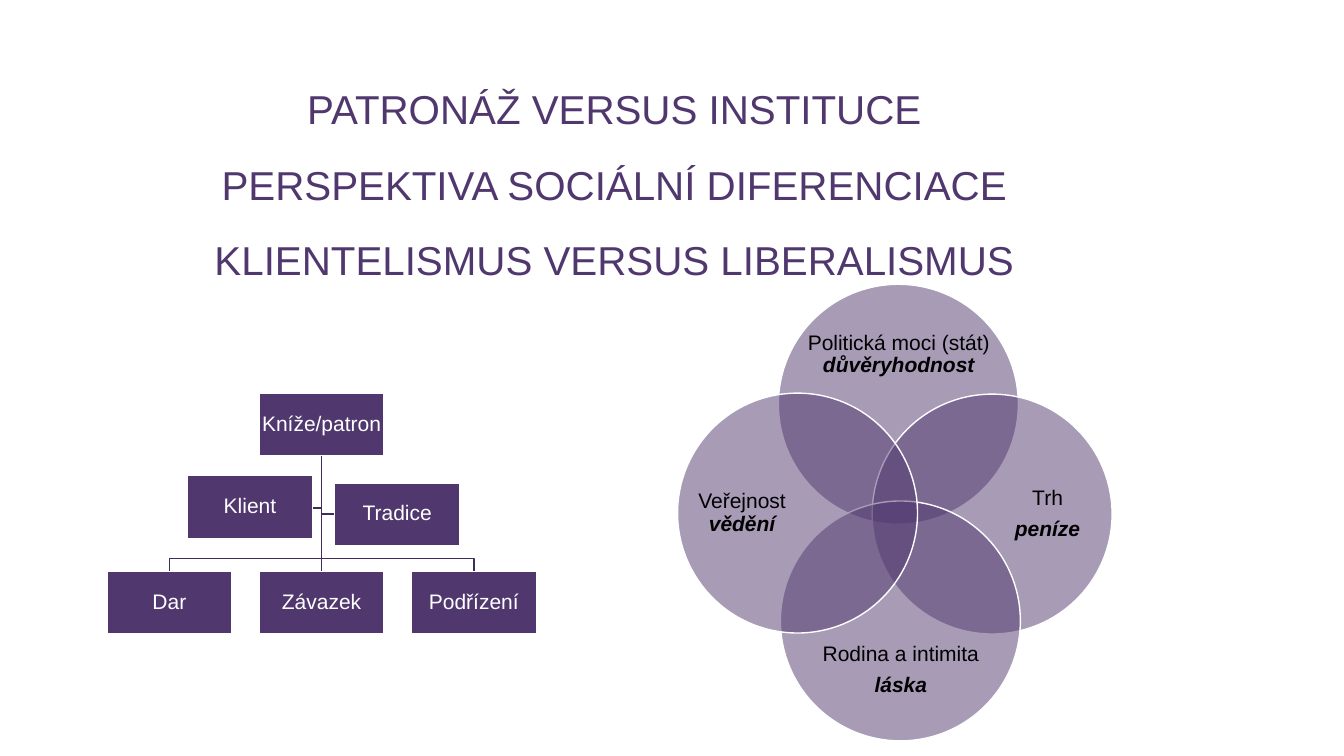
from lxml import etree
from pptx import Presentation
from pptx import util as u
from pptx.dml.color import RGBColor
from pptx.enum import shapes, text
from pptx.oxml.ns import qn

PX = 9144  # EMU in one px, 100 px to the inch
HUES = {"plum": "50386F", "line": "402D59", "white": "FFFFFF", "black": "000000"}
DISC = 238
BOX_W, BOX_H = 124, 62
TOP, LOW, STEP = 390, 567, 151
MID = 319  # centre of the tree
BEND = 554

# disc left and top, label box, plain words, stressed words, separator
DISCS = [
    ((772, 282), (800, 314, 183, 76), "Politická moci (stát)", "důvěryhodnost", " "),
    ((865, 391), (993, 419, 92, 183), "Trh", "peníze", "\n"),
    ((774, 497), (802, 627, 183, 76), "Rodina a intimita", "láska", "\n"),
    ((672, 390), (690, 418, 92, 183), "Veřejnost", "vědění", " "),
]
LEAVES = ["Dar", "Závazek", "Podřízení"]


def hue(name):
    return RGBColor.from_string(HUES[name])


def emu(*nums):
    return [u.Emu(n * PX) for n in nums]


def setup(frame, anchor, inset=0):
    frame.word_wrap = True
    frame.vertical_anchor = anchor
    frame.margin_left = frame.margin_right = u.Emu(inset * PX)
    frame.margin_top = frame.margin_bottom = u.Emu(inset * PX)


def style(frame, size, color, lead, after=0):
    """Format every paragraph and run of a text frame."""
    for para in frame.paragraphs:
        para.alignment = text.PP_ALIGN.CENTER
        para.line_spacing = lead
        para.space_after = u.Pt(after)
        for run in para.runs:
            run.font.name = "Arial"
            run.font.size = u.Pt(size)
            run.font.color.rgb = hue(color)


def paint(shape, alpha=None):
    """Plum fill with a thin white edge; alpha is a percentage."""
    shape.shadow.inherit = False
    shape.fill.solid()
    shape.fill.fore_color.rgb = hue("plum")
    shape.line.color.rgb = hue("white")
    shape.line.width = u.Pt(1)
    if alpha:
        tint = shape._element.spPr.find(qn("a:solidFill"))[0]
        etree.SubElement(tint, qn("a:alpha"), val=str(alpha * 1000))


def title(slide, lines):
    frame = slide.shapes.add_textbox(*emu(97, 57, 1025, 210)).text_frame
    setup(frame, text.MSO_ANCHOR.TOP)
    frame.paragraphs[0].text = "\v".join(lines)
    style(frame, 28.8, "plum", 1.56)


def disc(slide, spot, area, plain, stress, gap):
    ring = slide.shapes.add_shape(shapes.MSO_SHAPE.OVAL, *emu(*spot, DISC, DISC))
    paint(ring, 50)
    frame = slide.shapes.add_textbox(*emu(*area)).text_frame
    setup(frame, text.MSO_ANCHOR.MIDDLE)
    frame.text = plain + gap
    run = frame.paragraphs[-1].add_run()
    run.text = stress
    run.font.bold = run.font.italic = True
    style(frame, 15, "black", 0.9, 6)


def box(slide, left, top, words):
    rect = slide.shapes.add_shape(
        shapes.MSO_SHAPE.RECTANGLE, *emu(left, top, BOX_W, BOX_H))
    paint(rect)
    setup(rect.text_frame, text.MSO_ANCHOR.MIDDLE, 1)
    rect.text_frame.text = words
    style(rect.text_frame, 15, "white", 0.9)
    return rect


def ink(line):
    line.line.color.rgb = hue("line")
    line.line.width = u.Pt(1)


def branch(slide, *spots):
    """Open bent line from the foot of the patron box through the spots."""
    build = slide.shapes.build_freeform(MID, TOP + BOX_H, scale=PX)
    build.add_line_segments(spots, close=False)
    bent = build.convert_to_shape()
    bent.shadow.inherit = False
    bent.fill.background()
    ink(bent)


def tree(slide):
    branch(slide, (MID, 510), (332, 510))
    branch(slide, (MID, 504), (309, 504))
    for end in (MID + STEP, MID - STEP):
        branch(slide, (MID, BEND), (end, BEND), (end, LOW))
    trunk = slide.shapes.add_connector(
        shapes.MSO_CONNECTOR.STRAIGHT, *emu(MID, TOP + BOX_H, MID, LOW))
    ink(trunk)
    etree.SubElement(trunk._element.spPr, qn("a:effectLst"))

    left = MID - BOX_W // 2
    patron = box(slide, left, TOP, "Kníže/patron")
    leaves = [box(slide, left + (i - 1) * STEP, LOW, words)
              for i, words in enumerate(LEAVES)]
    box(slide, 186, 472, "Klient")
    box(slide, 332, 479, "Tradice")
    trunk.begin_connect(patron, 2)
    trunk.end_connect(leaves[1], 0)


def main():
    deck = Presentation()
    deck.slide_width, deck.slide_height = emu(1333, 750)
    slide = deck.slides.add_slide(deck.slide_layouts[6])
    title(slide, ["PATRONÁŽ VERSUS INSTITUCE",
                  "PERSPEKTIVA SOCIÁLNÍ DIFERENCIACE",
                  "KLIENTELISMUS VERSUS LIBERALISMUS"])
    for item in DISCS:
        disc(slide, *item)
    tree(slide)
    deck.save("out.pptx")


if __name__ == "__main__":
    main()
